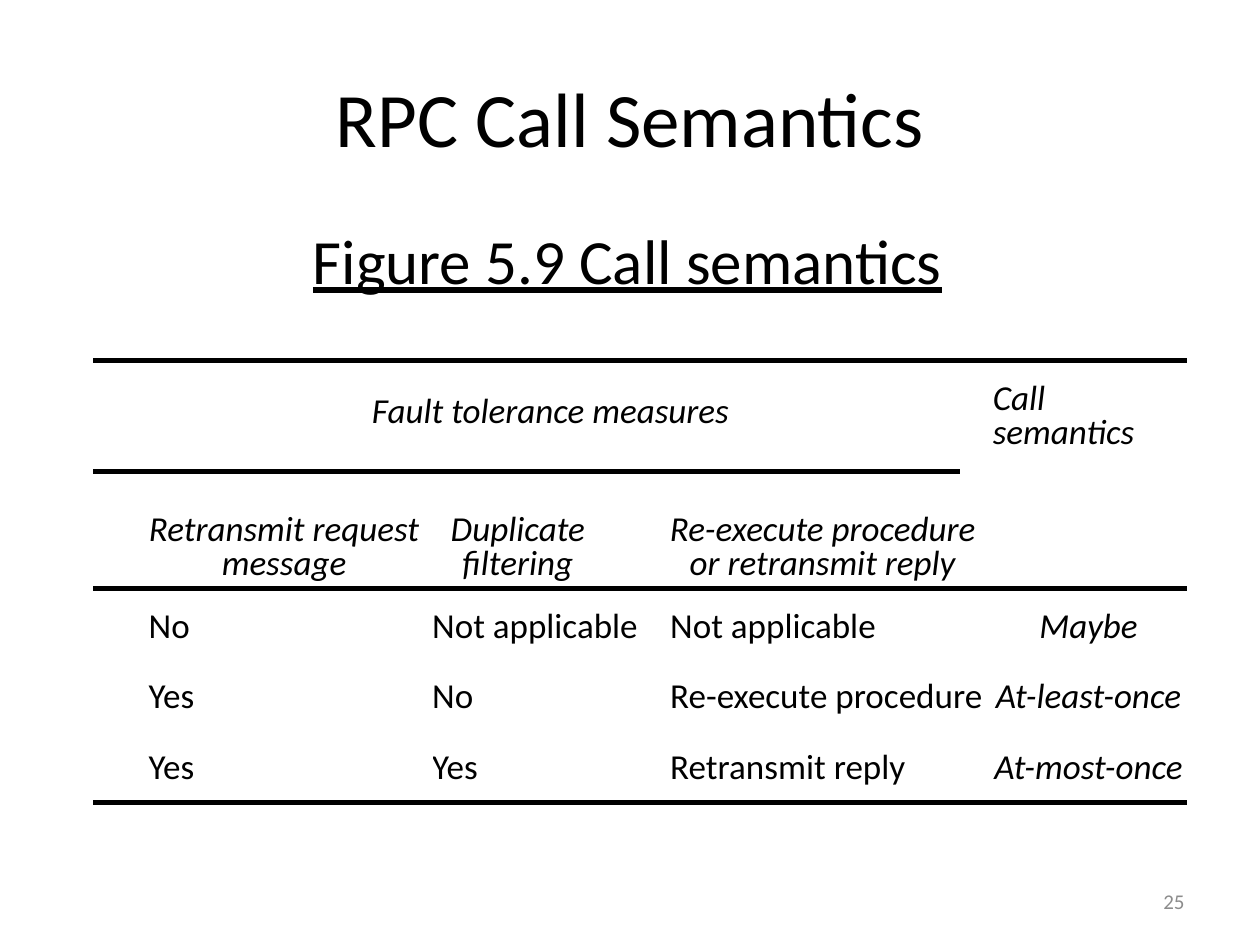
import pptx
import pptx.dml.color
import pptx.enum.shapes
import pptx.enum.text
import pptx.oxml
import pptx.util

Inches = pptx.util.Inches
Pt = pptx.util.Pt
Align = pptx.enum.text.PP_ALIGN
Anchor = pptx.enum.text.MSO_ANCHOR
BLACK = pptx.dml.color.RGBColor(0x00, 0x00, 0x00)
GRAY = pptx.dml.color.RGBColor(0x8C, 0x8C, 0x8C)

WIDTHS = [2.69, 1.87, 2.56, 1.56]
HEIGHTS = [0.88, 0.93, 0.56, 0.56, 0.56]
HEADS = [
    ("Retransmit request\vmessage", 0.44, 0.1),
    ("Duplicate\vfiltering", 0, 0.51),
    ("Re-execute procedure\vor retransmit reply", 0, 0.1),
]
CASES = [
    ("No", "Not applicable", "Not applicable", "Maybe"),
    ("Yes", "No", "Re-execute procedure", "At-least-once"),
    ("Yes", "Yes", "Retransmit reply", "At-most-once"),
]
INDENTS = [0.44, 0, 0.02, 0]


def style(para, size, color=BLACK, align=Align.LEFT):
    para.alignment = align
    para.font.name = "Calibri"
    para.font.size = Pt(size)
    para.font.color.rgb = color


def add_text(slide, box, text, size, color=BLACK, align=Align.CENTER):
    frame = slide.shapes.add_textbox(*map(Inches, box)).text_frame
    frame.word_wrap = True
    frame.vertical_anchor = Anchor.MIDDLE
    frame.text = text
    para = frame.paragraphs[0]
    style(para, size, color, align)
    return para


def fill_cell(cell, text, left, top, right=0, align=Align.LEFT, italic=False):
    cell.margin_left, cell.margin_top = Inches(left), Inches(top)
    cell.margin_right, cell.margin_bottom = Inches(right), 0
    cell.text = text
    para = cell.text_frame.paragraphs[0]
    style(para, 20, align=align)
    para.font.italic = italic
    if "\v" in text:
        para.line_spacing = Pt(19.5)


def add_rule(slide, left, top, width):
    line = slide.shapes.add_connector(
        pptx.enum.shapes.MSO_CONNECTOR.STRAIGHT,
        Inches(left), Inches(top), Inches(left + width), Inches(top))
    line.line.color.rgb = BLACK
    line.line.width = Pt(2.88)
    props = line._element.spPr
    props.append(props.makeelement(pptx.oxml.ns.qn("a:effectLst"), {}))


def add_grid(slide, box):
    left, top, width, height = box
    grid = slide.shapes.add_table(
        len(HEIGHTS), len(WIDTHS), *map(Inches, box)).table
    grid.first_row = grid.horz_banding = False
    for col, size in zip(grid.columns, WIDTHS):
        col.width = Inches(size)
    for row, size in zip(grid.rows, HEIGHTS):
        row.height = Inches(size)
    for cell in grid.iter_cells():
        cell.fill.background()

    grid.cell(0, 0).merge(grid.cell(0, 2))
    fill_cell(grid.cell(0, 0), "Fault tolerance measures", 0.14, 0.24,
              align=Align.CENTER, italic=True)
    fill_cell(grid.cell(0, 3), "Call\vsemantics", 0.02, 0.2, italic=True)
    for col, (text, indent, right) in enumerate(HEADS):
        fill_cell(grid.cell(1, col), text, indent, 0.36, right,
                  Align.CENTER, True)
    for row, case in enumerate(CASES, 2):
        for col, text in enumerate(case):
            last = col == len(case) - 1
            fill_cell(grid.cell(row, col), text, INDENTS[col], 0.13,
                      align=Align.CENTER if last else Align.LEFT, italic=last)

    head = top + HEIGHTS[0]
    add_rule(slide, left, top, width)
    add_rule(slide, left, head, 6.88)
    add_rule(slide, left, head + HEIGHTS[1], width)
    add_rule(slide, left, top + height, width)


def main():
    deck = pptx.Presentation()
    deck.slide_width, deck.slide_height = Inches(10), Inches(7.5)
    slide = deck.slides.add_slide(deck.slide_layouts[6])
    add_text(slide, (0.5, 0.3, 9, 1.25), "RPC Call Semantics", 44)
    name = add_text(slide, (0.5, 1.43, 8.96, 1.25),
                    "Figure 5.9 Call semantics", 36)
    name.font.underline = True
    add_grid(slide, (0.74, 2.86, sum(WIDTHS), sum(HEIGHTS) + 0.02))
    add_text(slide, (7.17, 6.95, 2.33, 0.4), "25", 12, GRAY, Align.RIGHT)
    deck.save("out.pptx")


if __name__ == "__main__":
    main()
